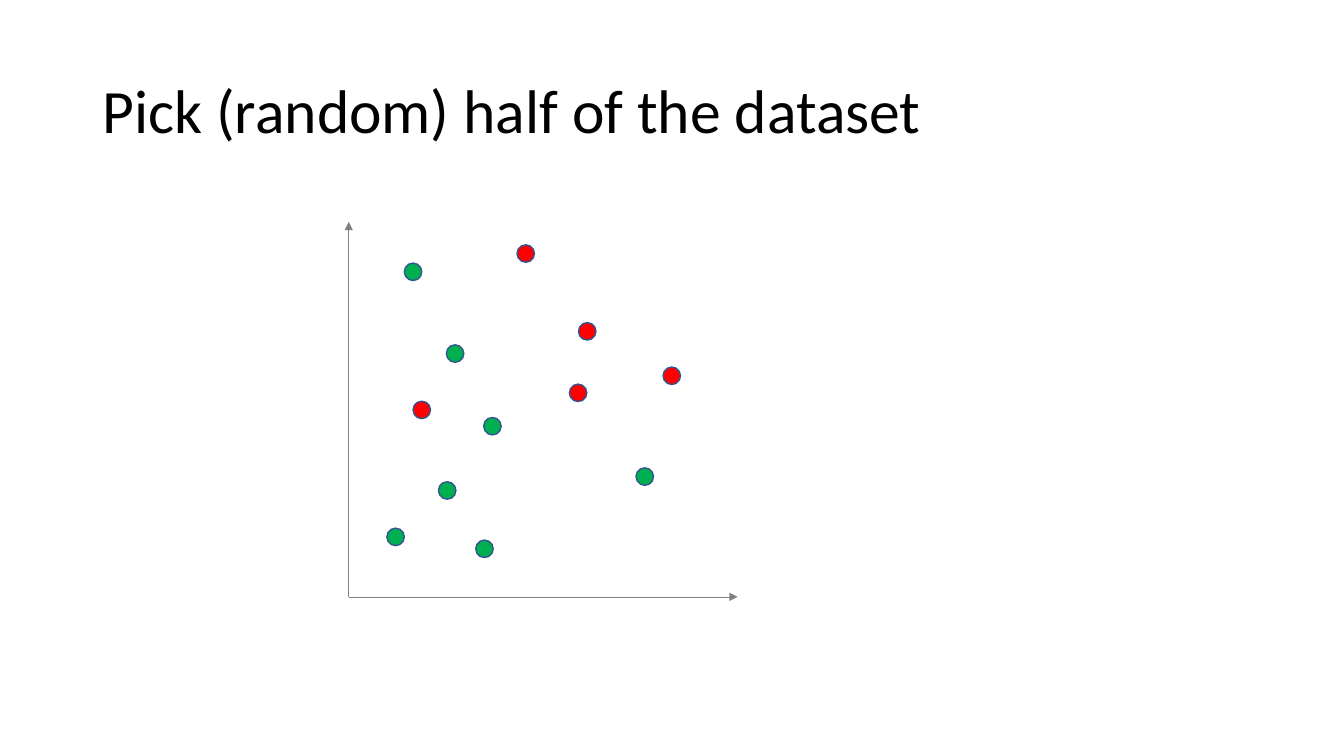
from lxml import etree
from pptx import Presentation
from pptx.dml.color import RGBColor
from pptx.enum import shapes, text
from pptx.oxml import ns
from pptx.util import Cm, Pt

HUES = {"ink": "000000", "axis": "808080", "edge": "325491",
        "green": "00B050", "red": "FF0000"}


def tint(name):
    return RGBColor.from_string(HUES[name])


deck = Presentation()
deck.slide_width, deck.slide_height = Cm(33.87), Cm(19.05)
slide = deck.slides.add_slide(deck.slide_layouts[5])

left, base = 8.79, 15.04
for x, y in [(left, 5.59), (18.59, base)]:
    axis = slide.shapes.add_connector(
        shapes.MSO_CONNECTOR.STRAIGHT, Cm(left), Cm(base), Cm(x), Cm(y))
    axis.line.color.rgb = tint("axis")
    axis.line.width = Pt(0.5)
    tip = etree.SubElement(axis.line._get_or_add_ln(), ns.qn("a:tailEnd"))
    tip.set("type", "triangle")
    etree.SubElement(axis._element.spPr, ns.qn("a:effectLst"))

title = slide.shapes.title
title.left, title.top = Cm(2.33), Cm(1.01)
title.width, title.height = Cm(29.21), Cm(3.68)
frame = title.text_frame
frame.text = "Pick (random) half of the dataset"
look = {"auto_size": text.MSO_AUTO_SIZE.NONE, "word_wrap": True,
        "vertical_anchor": text.MSO_ANCHOR.MIDDLE}
for key, value in look.items():
    setattr(frame, key, value)
line = frame.paragraphs[0]
line.alignment = text.PP_ALIGN.LEFT
line.line_spacing = 0.9
font = line.runs[0].font
for key, value in {"name": "Calibri", "size": Pt(44), "bold": False}.items():
    setattr(font, key, value)
font.color.rgb = tint("ink")

size = 0.44
points = [
    (10.19, 6.63, "green"), (14.58, 8.13, "red"), (10.41, 10.11, "red"),
    (11.05, 12.14, "green"), (9.75, 13.31, "green"), (16.03, 11.79, "green"),
    (11.25, 8.69, "green"), (14.35, 9.68, "red"), (12.19, 10.52, "green"),
    (11.99, 13.61, "green"), (13.03, 6.17, "red"), (16.71, 9.25, "red"),
]
group = slide.shapes.add_group_shape()
for x, y, hue in points:
    dot = group.shapes.add_shape(
        shapes.MSO_SHAPE.OVAL, Cm(x), Cm(y), Cm(size), Cm(size))
    dot.shadow.inherit = False
    dot.fill.solid()
    dot.fill.fore_color.rgb = tint(hue)
    dot.line.color.rgb = tint("edge")
    dot.line.width = Pt(1)

deck.save("out.pptx")
